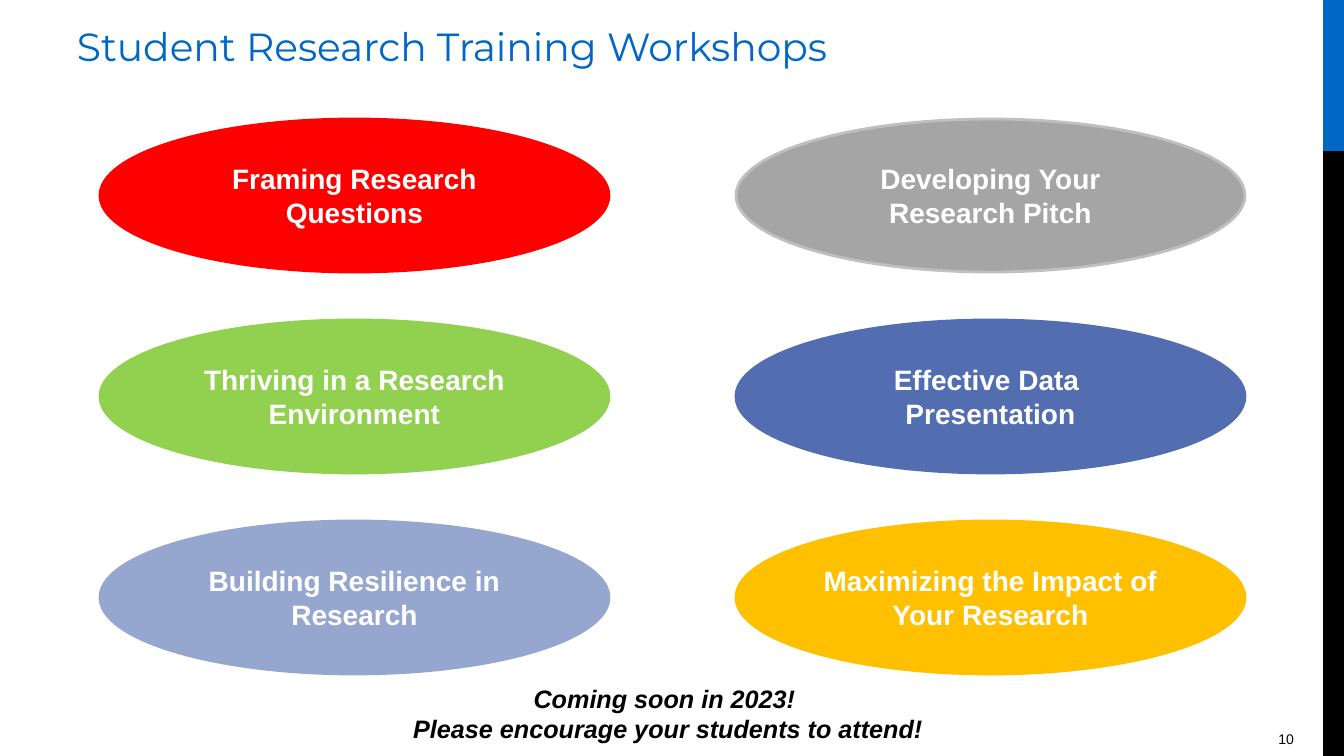
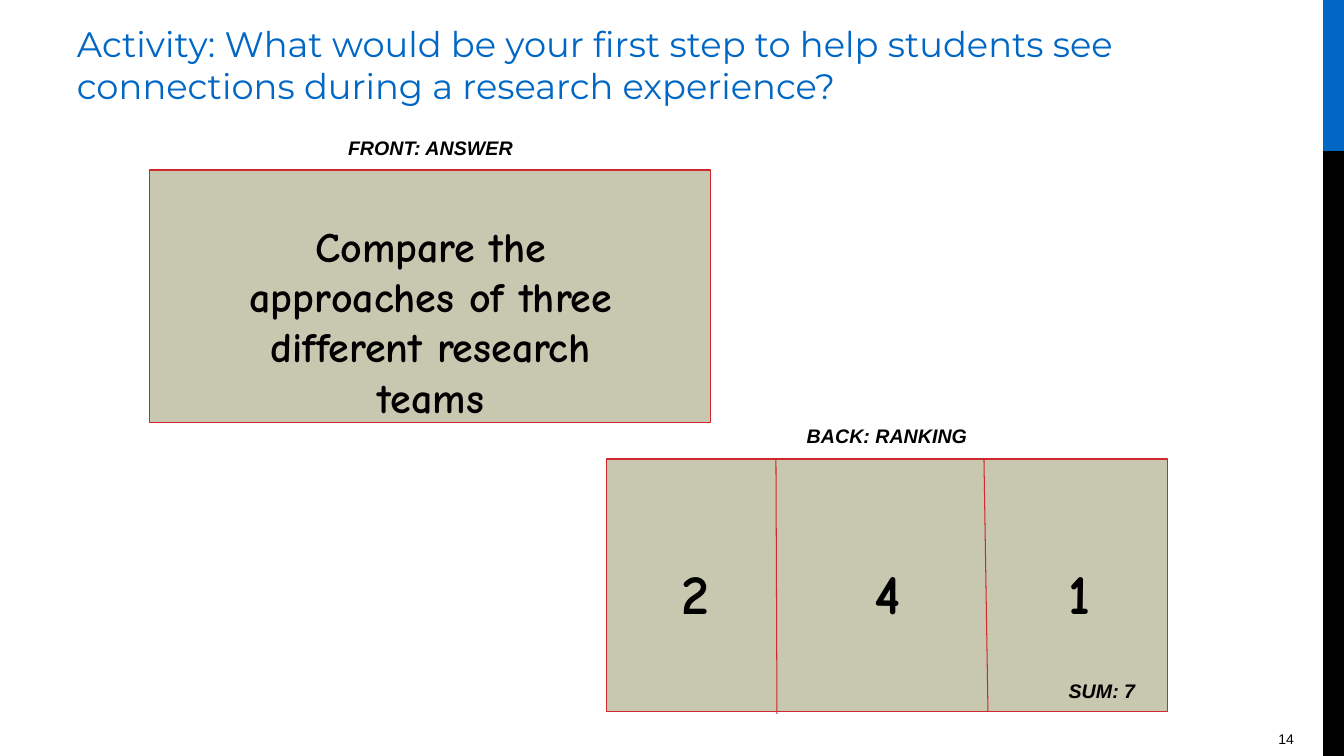
from lxml import etree
from pptx import Presentation
from pptx.dml.color import RGBColor
from pptx.enum.shapes import MSO_CONNECTOR as Connector, MSO_SHAPE as Shape
from pptx.enum.text import MSO_ANCHOR as Anchor, MSO_AUTO_SIZE as AutoSize, PP_ALIGN as Align
from pptx.oxml.ns import qn
from pptx.util import Emu, Pt

WIDTH, HEIGHT = 1344, 756
BLUE, BLACK, WHITE = "0067C5", "000000", "FFFFFF"
CARD_FILL, CARD_LINE = "C8C8B1", "D1282E"
BODY_FONT, TITLE_FONT, CARD_FONT = "Arial", "Montserrat", "Comic Neue"


def px(length):
    return Emu(round(length * 914400 / 100.8))


def color(value):
    return RGBColor.from_string(value)


class Deck:
    """Holds the shared style and the slide being built."""

    def __init__(self):
        self.presentation = Presentation()
        self.presentation.slide_width = px(WIDTH)
        self.presentation.slide_height = px(HEIGHT)

    def new_slide(self, title, number, title_size):
        layout = self.presentation.slide_layouts[5]
        self.slide = self.presentation.slides.add_slide(layout)
        self.shapes = self.slide.shapes
        # Side bands and slide number
        self.shape(Shape.RECTANGLE, (1323, 0, 21, 151), BLUE)
        self.shape(Shape.RECTANGLE, (1323, 151, 21, 605), BLACK)
        self.text((1075, 726, 269, 30), str(number), 10, align=Align.RIGHT,
                  margins=(10, 5, 50, 5))
        # Title
        placeholder = self.shapes.title
        self.place(placeholder, (67, 17, 1210, 60))
        self.set_text(placeholder, title, title_size, TITLE_FONT, BLUE, align=Align.LEFT)

    def start_group(self):
        self.shapes = self.slide.shapes.add_group_shape().shapes

    def place(self, shape, box):
        shape.left, shape.top, shape.width, shape.height = map(px, box)

    def set_text(self, shape, text, size, font=BODY_FONT, text_color=BLACK, bold=False,
                 italic=False, align=Align.CENTER, anchor=Anchor.TOP, margins=(10, 5, 10, 5)):
        frame = shape.text_frame
        frame.text = text
        frame.word_wrap = True
        frame.auto_size = AutoSize.NONE
        frame.vertical_anchor = anchor
        (frame.margin_left, frame.margin_top,
         frame.margin_right, frame.margin_bottom) = map(px, margins)
        for paragraph in frame.paragraphs:
            paragraph.alignment = align
            for run in paragraph.runs:
                run.font.name = font
                run.font.size = Pt(size)
                run.font.bold = bold
                run.font.italic = italic
                run.font.color.rgb = color(text_color)

    def text(self, box, text, size, **style):
        self.set_text(self.shapes.add_textbox(*map(px, box)), text, size, **style)

    def shape(self, kind, box, fill, line=None, line_width=0.75):
        shape = self.shapes.add_shape(kind, *map(px, box))
        shape.shadow.inherit = False
        shape.fill.solid()
        shape.fill.fore_color.rgb = color(fill)
        if line:
            shape.line.color.rgb = color(line)
            shape.line.width = Pt(line_width)
        else:
            shape.line.fill.background()
        return shape

    def workshop(self, box, text, fill, line):
        ellipse = self.shape(Shape.OVAL, box, fill, line, 2)
        self.set_text(ellipse, text, 20, text_color=WHITE, bold=True, anchor=Anchor.MIDDLE)

    def card(self, left, top):
        self.shape(Shape.RECTANGLE, (left, top, 561, 253), CARD_FILL, CARD_LINE)

    def card_text(self, box, text, size):
        self.text(box, text, size, font=CARD_FONT, bold=True, margins=(10, 10, 10, 10))

    def label(self, box, text):
        self.text(box, text, 14, bold=True, italic=True, anchor=Anchor.MIDDLE,
                  margins=(10, 10, 10, 10))

    def divider(self, *ends):
        line = self.shapes.add_connector(Connector.STRAIGHT, *map(px, ends))
        line.line.color.rgb = color(CARD_LINE)
        line.line.width = Pt(0.75)
        etree.SubElement(line._element.spPr, qn("a:effectLst"))


def build_workshops(deck):
    deck.new_slide("Student Research Training Workshops", 10, 28)
    # Workshops, row by row: text, fill, outline
    workshops = [
        ("Framing Research Questions", "FF0000", "FF0000"),
        ("Developing Your Research Pitch", "A5A5A5", "BFBFBF"),
        ("Thriving in a Research Environment", "92D050", "92D050"),
        ("Effective Data \vPresentation", "526DB0", "526DB0"),
        ("Building Resilience in Research", "96A7CF", "96A7CF"),
        ("Maximizing the Impact of Your Research", "FFC000", "FFC000"),
    ]
    for index, (text, fill, line) in enumerate(workshops):
        row, column = divmod(index, 2)
        deck.workshop((100 + 636 * column, 119 + 201 * row, 509, 153), text, fill, line)
    deck.text((396, 678, 544, 72),
              "Coming soon in 2023! \nPlease encourage your students to attend!",
              18, bold=True, italic=True)


def build_activity(deck):
    deck.new_slide("Activity: What would be your first step to help students see "
                   "connections during a research experience?", 14, 25.2)
    # Front of the card
    deck.card(150, 170)
    deck.card_text((224, 210, 414, 173),
                   "Compare the approaches of three different research teams", 30)
    deck.label((312, 126, 237, 44), "FRONT: ANSWER")
    # Back of the card
    deck.start_group()
    deck.card(607, 459)
    deck.divider(776, 459, 777, 714)
    deck.divider(984, 460, 988, 712)
    for index, rank in enumerate("241"):
        deck.card_text((626 + 192 * index, 548, 139, 89), rank, 40)
    deck.label((760, 414, 254, 44), "BACK: RANKING")
    deck.label((1028, 669, 148, 44), "SUM: 7")


def main():
    deck = Deck()
    build_workshops(deck)
    build_activity(deck)
    deck.presentation.save("out.pptx")


if __name__ == "__main__":
    main()
